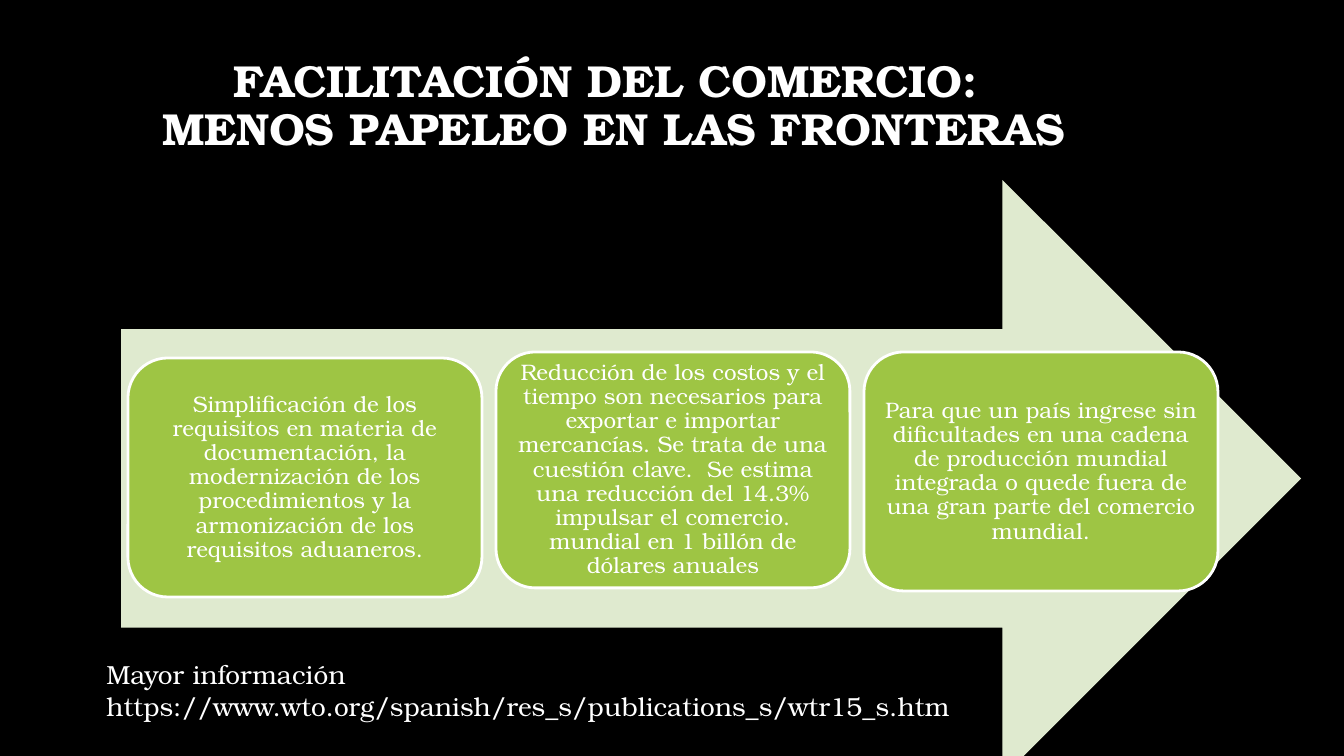
import pptx
import pptx.util
from pptx.dml.color import RGBColor
from pptx.enum.shapes import MSO_SHAPE
from pptx.enum.text import MSO_ANCHOR, PP_ALIGN

SCALE = 914400 / 134.4  # EMU per px
FONT = "TeX Gyre Bonum"
BLACK = RGBColor(0x00, 0x00, 0x00)
WHITE = RGBColor(0xFF, 0xFF, 0xFF)
GREEN = RGBColor(0x9E, 0xC5, 0x44)
PALE = RGBColor(0xDF, 0xEA, 0xCF)


def px(num):
    return pptx.util.Emu(round(num * SCALE))


class Deck:
    def __init__(self, wide, high):
        self.file = pptx.Presentation()
        self.file.slide_width = px(wide)
        self.file.slide_height = px(high)
        self.slide = self.file.slides.add_slide(self.file.slide_layouts[6])
        fill = self.slide.background.fill
        fill.solid()
        fill.fore_color.rgb = BLACK

    def style(self, frame, text, size, bold=False, align=PP_ALIGN.CENTER,
              anchor=MSO_ANCHOR.MIDDLE, space=0.9):
        frame.word_wrap = True
        frame.vertical_anchor = anchor
        frame.text = text
        for para in frame.paragraphs:
            para.alignment = align
            para.line_spacing = space
            para.font.name = FONT
            para.font.size = pptx.util.Pt(size)
            para.font.bold = bold
            para.font.color.rgb = WHITE

    def text(self, left, top, wide, high, text, size, **look):
        box = self.slide.shapes.add_textbox(*map(px, (left, top, wide, high)))
        self.style(box.text_frame, text, size, **look)

    def shape(self, kind, left, top, wide, high, color):
        item = self.slide.shapes.add_shape(
            kind, *map(px, (left, top, wide, high)))
        item.shadow.inherit = False
        item.fill.solid()
        item.fill.fore_color.rgb = color
        item.line.fill.background()
        return item

    def card(self, left, top, wide, high, text):
        item = self.shape(MSO_SHAPE.ROUNDED_RECTANGLE,
                          left, top, wide, high, GREEN)
        item.line.color.rgb = WHITE
        item.line.width = pptx.util.Pt(1.5)
        frame = item.text_frame
        frame.margin_left = frame.margin_right = px(7)
        frame.margin_top = frame.margin_bottom = px(7)
        self.style(frame, text, 12)


def main():
    deck = Deck(1344, 756)

    # Title
    deck.text(43, 34, 1141, 146,
              "FACILITACIÓN DEL COMERCIO: \vMENOS PAPELEO EN LAS FRONTERAS",
              24, bold=True)

    # Arrow behind the cards
    deck.shape(MSO_SHAPE.RIGHT_ARROW, 121, 180, 1180, 597, PALE)

    # Cards: top, height, text
    cards = [
        (358, 239, "Simplificación de los requisitos en materia de "
         "documentación, la modernización de los procedimientos y la "
         "armonización de los requisitos aduaneros."),
        (352, 236, "Reducción de los costos y el tiempo son necesarios para "
         "exportar e importar mercancías. Se trata de una cuestión clave.  "
         "Se estima una reducción del 14.3% impulsar el comercio. mundial "
         "en 1 billón de dólares anuales"),
        (352, 239, "Para que un país ingrese sin dificultades en una cadena "
         "de producción mundial integrada o quede fuera de una gran parte "
         "del comercio mundial."),
    ]
    for num, (top, high, text) in enumerate(cards):
        deck.card(128 + 368 * num, top, 354, high, text)

    # Further reading
    deck.text(93, 652, 976, 77,
              "Mayor información "
              "https://www.wto.org/spanish/res_s/publications_s/wtr15_s.htm",
              14, align=PP_ALIGN.LEFT, anchor=MSO_ANCHOR.TOP, space=1.0)

    deck.file.save("out.pptx")


if __name__ == "__main__":
    main()
